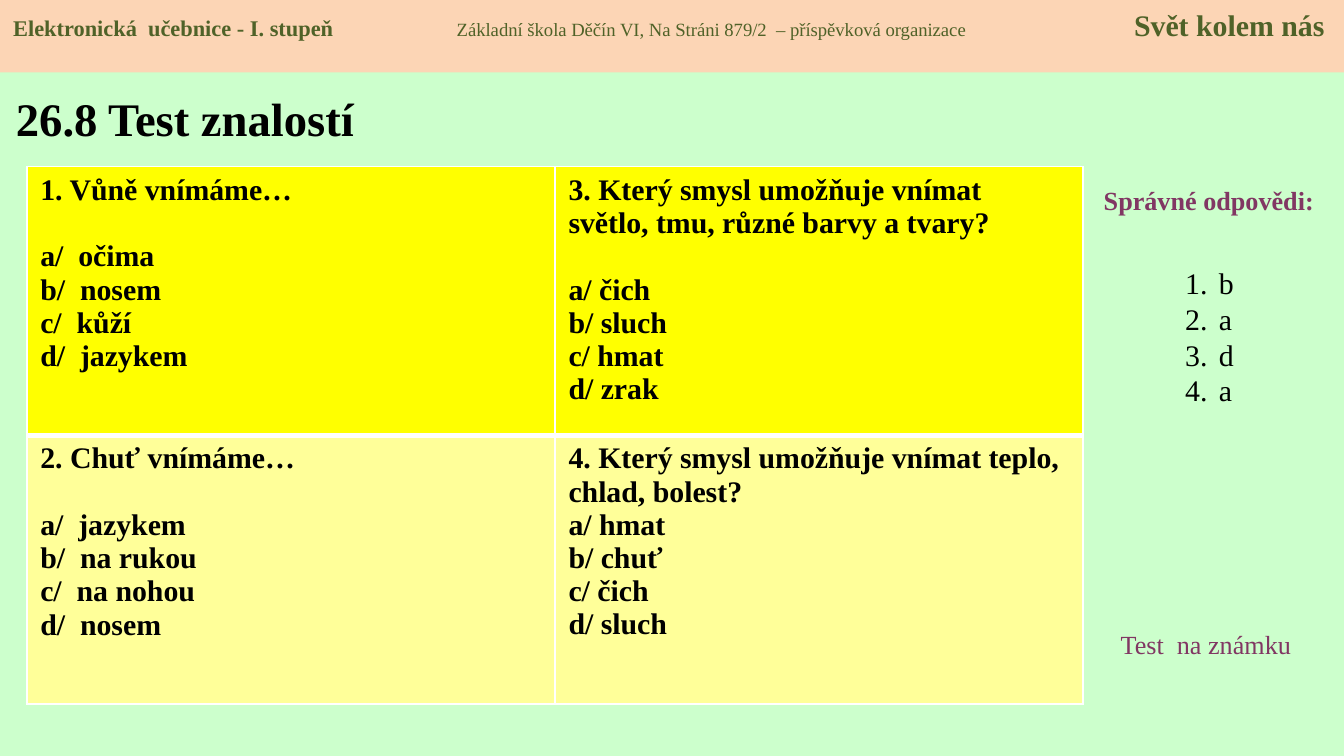
from lxml import etree
from pptx import Presentation
from pptx.dml.color import RGBColor
from pptx.enum.shapes import MSO_SHAPE
from pptx.enum.text import MSO_ANCHOR, PP_ALIGN
from pptx.oxml.ns import qn
from pptx.util import Inches, Pt

RECTANGLE = MSO_SHAPE.RECTANGLE
TOP, MIDDLE = MSO_ANCHOR.TOP, MSO_ANCHOR.MIDDLE
LEFT, CENTER = PP_ALIGN.LEFT, PP_ALIGN.CENTER

# Content
FONT = "Times New Roman"
BLACK, PLUM, GREEN, WHITE = "000000", "813763", "4F6228", "FFFFFF"
BACKGROUND, BANNER = "CCFFCC", "FCD5B5"

BANNER_PARTS = [  # text, size, bold
    ("Elektronická  učebnice - I. stupeň", 12, True),
    ("Základní škola Děčín VI, Na Stráni 879/2  – příspěvková organizace", 10, False),
    ("Svět kolem nás", 16, True),
]
BANNER_TABS = [3.3, 8.34]

LABELS = [  # text, box, format, alignment, anchor
    ("26.8 Test znalostí", (0.02, 0.55, 3.19, 0.65),
     dict(size=25, color=BLACK, bold=True), LEFT, MIDDLE),
    ("Správné odpovědi:", (8.05, 1.32, 1.89, 0.34),
     dict(size=14, color=PLUM, bold=True), CENTER, TOP),
    ("Test  na známku", (8.24, 4.63, 1.57, 0.34),
     dict(size=14, color=PLUM), LEFT, TOP),
]

# Each question: lines of the question, gap before the choices, choices
QUESTIONS = [
    [(["1. Vůně vnímáme…"], 18,
      ["a/  očima", "b/  nosem", "c/  kůží", "d/  jazykem"]),
     (["3. Který smysl umožňuje vnímat", "světlo, tmu, různé barvy a tvary?"], 18,
      ["a/ čich", "b/ sluch", "c/ hmat", "d/ zrak"])],
    [(["2. Chuť vnímáme…"], 18,
      ["a/  jazykem", "b/  na rukou", "c/  na nohou", "d/  nosem"]),
     (["4. Který smysl umožňuje vnímat teplo, chlad, bolest?"], 0,
      ["a/ hmat", "b/ chuť", "c/ čich", "d/ sluch"])],
]
ROW_FILLS = ["FFFF00", "FFFF99"]
ROW_BORDERS = [dict(L=1, R=1, T=1, B=3), dict(L=1, R=1, T=3, B=1)]
TABLE_BOX = (0.2, 1.24, 7.86, 4)

ANSWERS = ["b", "a", "d", "a"]
ANSWERS_BOX = (8.72, 1.92, 0.55, 1.2)


def rgb(value):
    return RGBColor.from_string(value)


def inches(box):
    return [Inches(length) for length in box]


def add_run(paragraph, text, size, color, bold=False):
    run = paragraph.add_run()
    run.text = text
    run.font.color.rgb = rgb(color)
    for name, value in dict(name=FONT, size=Pt(size), bold=bold).items():
        setattr(run.font, name, value)


def add_paragraphs(frame, lines, **style):
    paragraphs = []
    for index, line in enumerate(lines):
        paragraph = frame.add_paragraph() if index else frame.paragraphs[0]
        add_run(paragraph, line, **style)
        paragraphs.append(paragraph)
    return paragraphs


def add_text_box(slide, box, lines, anchor=TOP, **style):
    frame = slide.shapes.add_textbox(*inches(box)).text_frame
    frame.word_wrap = True
    frame.vertical_anchor = anchor
    return add_paragraphs(frame, lines, **style)


def set_borders(cell, widths):
    properties = cell._tc.get_or_add_tcPr()
    for side, width in widths.items():
        line = etree.SubElement(properties, qn(f"a:ln{side}"), w=str(Pt(width)))
        fill = etree.SubElement(line, qn("a:solidFill"))
        etree.SubElement(fill, qn("a:srgbClr"), val=WHITE)


def add_banner(slide):
    banner = slide.shapes.add_shape(RECTANGLE, *inches((0, 0, 10, 0.54)))
    banner.shadow.inherit = False
    banner.fill.solid()
    banner.fill.fore_color.rgb = rgb(BANNER)
    banner.line.fill.background()
    banner.text_frame.vertical_anchor = TOP
    paragraph = banner.text_frame.paragraphs[0]
    paragraph.alignment = LEFT
    tabs = etree.SubElement(paragraph._p.get_or_add_pPr(), qn("a:tabLst"))
    for position in BANNER_TABS:
        etree.SubElement(tabs, qn("a:tab"), pos=str(Inches(position)), algn="l")
    for index, (text, size, bold) in enumerate(BANNER_PARTS):
        add_run(paragraph, "\t" + text if index else text, size, GREEN, bold)


def add_questions(slide):
    table = slide.shapes.add_table(2, 2, *inches(TABLE_BOX)).table
    for row, questions in enumerate(QUESTIONS):
        for column, (question, gap, choices) in enumerate(questions):
            cell = table.cell(row, column)
            set_borders(cell, ROW_BORDERS[row])
            cell.fill.solid()
            cell.fill.fore_color.rgb = rgb(ROW_FILLS[row])
            paragraphs = add_paragraphs(cell.text_frame, question + choices,
                                        size=16, color=BLACK, bold=True)
            paragraphs[len(question) - 1].space_after = Pt(gap)


def add_answers(slide):
    for paragraph in add_text_box(slide, ANSWERS_BOX, ANSWERS, size=16, color=BLACK):
        properties = paragraph._p.get_or_add_pPr()
        properties.set("marL", str(Inches(0.25)))
        properties.set("indent", str(-Inches(0.25)))
        etree.SubElement(properties, qn("a:buFont"), typeface=FONT)
        etree.SubElement(properties, qn("a:buAutoNum"), type="arabicPeriod")


def main():
    deck = Presentation()
    # Widescreen, 16 to 9
    deck.slide_width = Inches(10)
    deck.slide_height = deck.slide_width * 9 // 16
    slide = deck.slides.add_slide(deck.slide_layouts[6])
    slide.background.fill.solid()
    slide.background.fill.fore_color.rgb = rgb(BACKGROUND)

    for text, box, style, alignment, anchor in LABELS:
        add_text_box(slide, box, [text], anchor, **style)[0].alignment = alignment
    add_questions(slide)
    add_answers(slide)
    add_banner(slide)
    deck.save("out.pptx")


if __name__ == "__main__":
    main()
